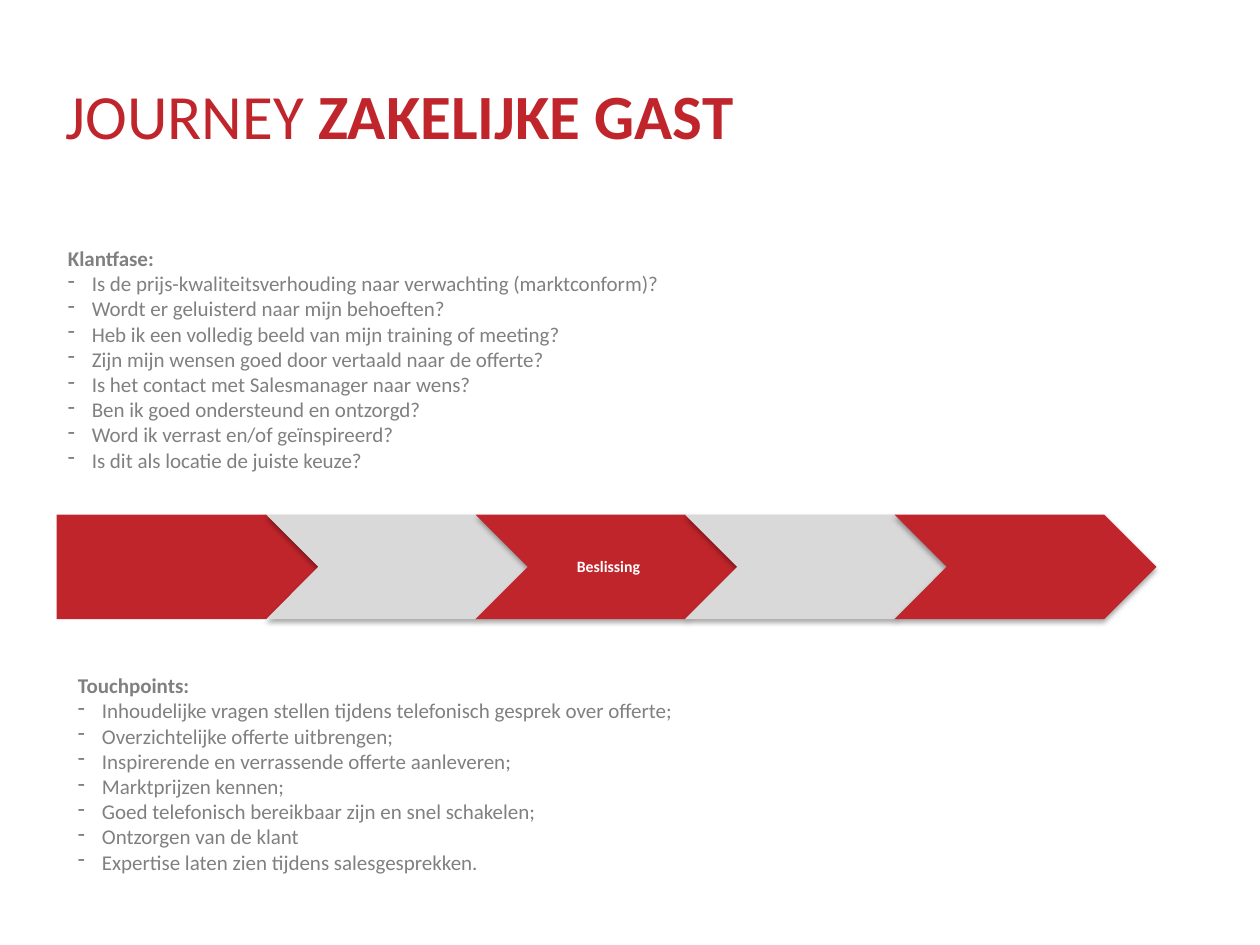
"""Build the customer journey slide for the business guest."""
from lxml import etree
from pptx import Presentation
from pptx import util as u
from pptx.dml.color import RGBColor
from pptx.enum import shapes, text
from pptx.oxml.ns import qn

RED = RGBColor(0xC0, 0x25, 0x2B)
LIGHT = RGBColor(0xD9, 0xD9, 0xD9)
GREY = RGBColor(0x80, 0x80, 0x80)
WHITE = RGBColor(0xFF, 0xFF, 0xFF)

prs = Presentation()
prs.slide_width, prs.slide_height = u.Inches(10), u.Inches(7.5)
COL, ROW = prs.slide_width / 100, prs.slide_height / 100
s = prs.slides.add_slide(prs.slide_layouts[6])


def add_box(left, top, width, height):
    box = s.shapes.add_textbox(*map(int, (left * COL, top * ROW, width * COL, height * ROW)))
    box.text_frame.word_wrap = True
    box.text_frame.auto_size = text.MSO_AUTO_SIZE.SHAPE_TO_FIT_TEXT
    return box.text_frame


def style(r, size, color, bold):
    r.font.name, r.font.size, r.font.bold = "Calibri", u.Pt(size), bold
    r.font.color.rgb = color


phases = ["", "", "Beslissing", "", ""]
for i, phase in enumerate(phases):
    kind = shapes.MSO_SHAPE.CHEVRON if i else shapes.MSO_SHAPE.PENTAGON
    sp = s.shapes.add_shape(kind, int((4.5 + 16.62 * i) * COL), int(54.45 * ROW),
                            int(20.8 * COL), int(11.07 * ROW))
    sp.fill.solid()
    sp.fill.fore_color.rgb = LIGHT if i % 2 else RED
    sp.line.fill.background()
    sp.shadow.inherit = False
    if i:
        effects = sp._element.spPr.find(qn("a:effectLst"))
        shadow = etree.SubElement(effects, qn("a:outerShdw"), blurRad="40000", dist="23000",
                                  dir="5400000", rotWithShape="0")
        tint = etree.SubElement(shadow, qn("a:srgbClr"), val="000000")
        etree.SubElement(tint, qn("a:alpha"), val="35000")
    if phase:
        tf = sp.text_frame
        tf.text = phase
        tf.vertical_anchor = text.MSO_ANCHOR.MIDDLE
        tf.margin_left, tf.margin_right = u.Inches(0.04), u.Inches(0.01)
        tf.margin_top = tf.margin_bottom = u.Inches(0.03)
        p = tf.paragraphs[0]
        p.alignment, p.line_spacing = text.PP_ALIGN.CENTER, 0.9
        style(p.runs[0], 9, WHITE, True)

tf = add_box(4.5, 7.6, 87.9, 9.07)
tf.margin_left = tf.margin_right = u.Inches(0.07)
tf.margin_top = tf.margin_bottom = u.Inches(0.04)
for words, bold in [("JOURNEY ", False), ("ZAKELIJKE GAST", True)]:
    r = tf.paragraphs[0].add_run()
    r.text = words
    style(r, 36, RED, bold)

lists = [
    ((4.4, 25.33, 83.3, 28.27), [
        "Klantfase:",
        "Is de prijs-kwaliteitsverhouding naar verwachting (marktconform)?",
        "Wordt er geluisterd naar mijn behoeften?",
        "Heb ik een volledig beeld van mijn training of meeting?",
        "Zijn mijn wensen goed door vertaald naar de offerte?",
        "Is het contact met Salesmanager naar wens?",
        "Ben ik goed ondersteund en ontzorgd?",
        "Word ik verrast en/of geïnspireerd?",
        "Is dit als locatie de juiste keuze?",
    ]),
    ((5.2, 70.53, 87.2, 33.6), [
        "Touchpoints:",
        "Inhoudelijke vragen stellen tijdens telefonisch gesprek over offerte;",
        "Overzichtelijke offerte uitbrengen;",
        "Inspirerende en verrassende offerte aanleveren;",
        "Marktprijzen kennen;",
        "Goed telefonisch bereikbaar zijn en snel schakelen;",
        "Ontzorgen van de klant",
        "Expertise laten zien tijdens salesgesprekken.",
    ]),
]
for place, lines in lists:
    tf = add_box(*place)
    tf.text = "\n".join(lines)
    for i, p in enumerate(tf.paragraphs):
        style(p.runs[0], 12, GREY, i == 0)
        if i:
            pPr = p._p.get_or_add_pPr()
            pPr.set("marL", str(u.Inches(0.19)))
            pPr.set("indent", str(-u.Inches(0.19)))
            etree.SubElement(pPr, qn("a:buChar"), char="-")

prs.save("out.pptx")
